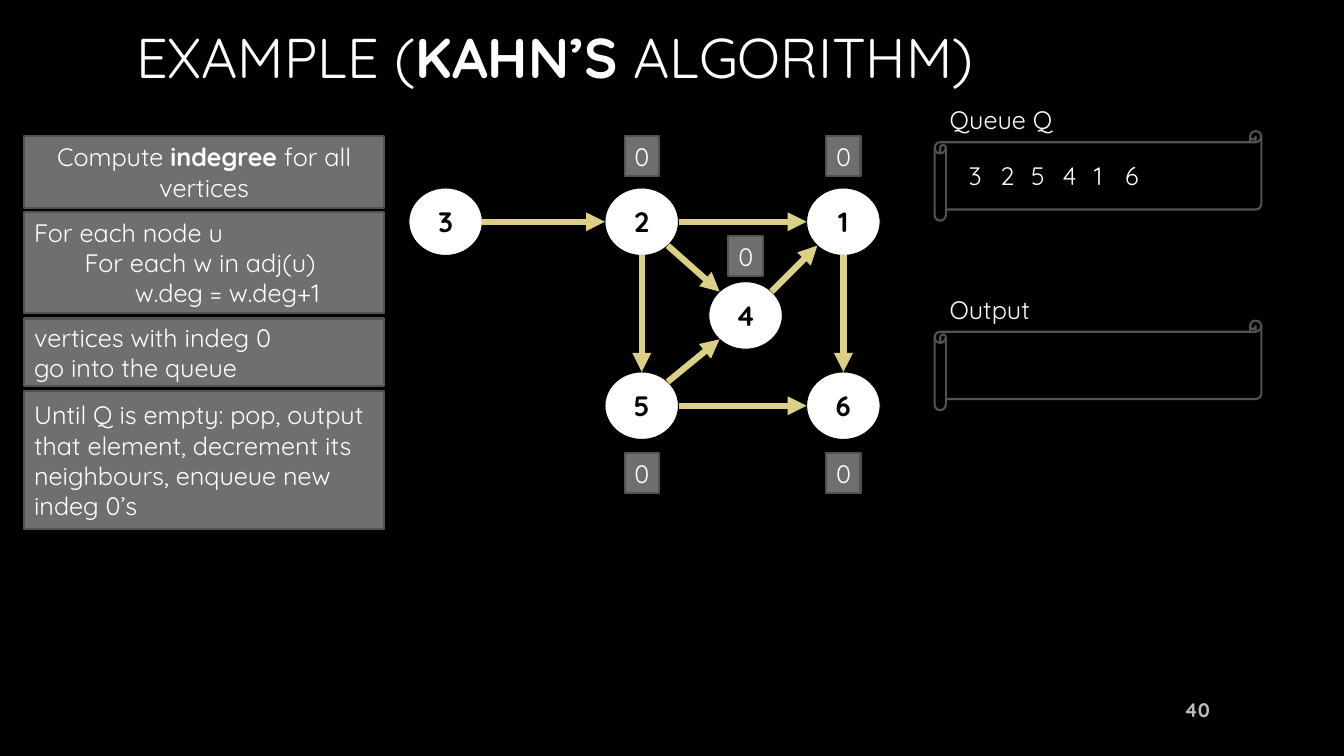
from math import cos, radians, sin

from lxml import etree
from pptx import Presentation
from pptx import util as u
from pptx.dml.color import RGBColor
from pptx.enum import shapes, text
from pptx.oxml import ns

BLACK = RGBColor(0x00, 0x00, 0x00)
WHITE = RGBColor(0xFF, 0xFF, 0xFF)
PANEL_GREY = RGBColor(0x6F, 0x6F, 0x6F)
BORDER_GREY = RGBColor(0x52, 0x52, 0x52)
NUMBER_GREY = RGBColor(0xBF, 0xBF, 0xBF)
ARROW_YELLOW = RGBColor(0xDC, 0xD0, 0x84)
FONT = "Quicksand"

# Centres of the graph's columns and rows, in inches
COLUMNS = (4.42, 6.365, 7.395, 8.365)
ROWS = (2.2, 3.13, 4.025)
NODE_WIDTH, NODE_HEIGHT = 0.73, 0.67
LABEL_WIDTH, LABEL_HEIGHT = 0.34, 0.4

# Node: column, row, distance down to the centre of its indegree label
NODES = {
    "1": (3, 0, -0.65), "6": (3, 2, 0.67), "5": (1, 2, 0.67),
    "2": (1, 0, -0.65), "4": (2, 1, -0.59), "3": (0, 0, None),
}
# Ellipse connection sites run anticlockwise from the top
TOP, TOP_LEFT, LEFT, BOTTOM_LEFT, BOTTOM, BOTTOM_RIGHT, RIGHT, TOP_RIGHT = range(8)
EDGES = (
    ("3", RIGHT, "2", LEFT), ("2", RIGHT, "1", LEFT),
    ("2", BOTTOM_RIGHT, "4", TOP_LEFT), ("4", TOP_RIGHT, "1", BOTTOM_LEFT),
    ("5", TOP_RIGHT, "4", BOTTOM_LEFT), ("2", BOTTOM, "5", TOP),
    ("1", BOTTOM, "6", TOP), ("5", RIGHT, "6", LEFT),
)

STEPS_LEFT, STEPS_WIDTH = 0.24, 3.57
# Top, height, alignment, paragraphs of (wording, bold) runs
STEPS = (
    (1.35, 0.71, text.PP_ALIGN.CENTER,
     [[("Compute ", False), ("indegree", True), (" for all vertices", False)]]),
    (2.1, 1.01, text.PP_ALIGN.LEFT,
     [[("For each node u", False)], [("\tFor each w in adj(u)", False)],
      [("\t\tw.deg = w.deg+1", False)]]),
    (3.16, 0.67, text.PP_ALIGN.LEFT,
     [[("vertices with indeg 0", False)], [("go into the queue", False)]]),
    (3.88, 1.37, text.PP_ALIGN.LEFT,
     [[("Until Q is empty: pop, output that element, decrement its "
        "neighbours, enqueue new indeg 0’s", False)]]),
)

SCROLL_LEFT, SCROLL_WIDTH, SCROLL_HEIGHT = 9.27, 3.24, 0.89
QUEUE = "325416"
QUEUE_LEFT, QUEUE_TOP, QUEUE_STEP = 9.51, 1.54, 0.31


def inches(*lengths):
    return [u.Inches(length) for length in lengths]


def write(frame, paragraphs, size=18, color=WHITE, align=text.PP_ALIGN.LEFT,
          anchor=text.MSO_ANCHOR.MIDDLE, wrap=True):
    """Fill a frame with paragraphs, each a list of (wording, bold) runs."""
    frame.word_wrap = wrap
    frame.vertical_anchor = anchor
    for index, runs in enumerate(paragraphs):
        para = frame.add_paragraph() if index else frame.paragraphs[0]
        para.alignment = align
        para.font.name = FONT
        para.font.size = u.Pt(size)
        para.font.color.rgb = color
        for wording, bold in runs:
            span = para.add_run()
            span.text = wording
            span.font.bold = bold


def add_box(page, kind, place, fill, border, border_width=1.5):
    box = page.shapes.add_shape(kind, *inches(*place))
    box.shadow.inherit = False
    box.fill.solid()
    box.fill.fore_color.rgb = fill
    box.line.color.rgb = border
    box.line.width = u.Pt(border_width)
    return box


def add_label(page, wording, left, top, width=LABEL_WIDTH):
    box = page.shapes.add_textbox(*inches(left, top, width, LABEL_HEIGHT))
    write(box.text_frame, [[(wording, False)]],
          anchor=text.MSO_ANCHOR.TOP, wrap=False)


def add_scroll(page, caption, top, caption_width):
    add_box(page, shapes.MSO_SHAPE.HORIZONTAL_SCROLL,
            (SCROLL_LEFT, top, SCROLL_WIDTH, SCROLL_HEIGHT), BLACK, BORDER_GREY)
    add_label(page, caption, SCROLL_LEFT + 0.05, top - 0.31, caption_width)


def add_node(page, name, column, row):
    place = (COLUMNS[column] - NODE_WIDTH / 2, ROWS[row] - NODE_HEIGHT / 2,
             NODE_WIDTH, NODE_HEIGHT)
    node = add_box(page, shapes.MSO_SHAPE.OVAL, place, WHITE, BLACK, 0.75)
    write(node.text_frame, [[(name, True)]], 20, BLACK, text.PP_ALIGN.CENTER)
    return node


def add_indegree(page, column, row, offset):
    place = (COLUMNS[column] - LABEL_WIDTH / 2,
             ROWS[row] + offset - LABEL_HEIGHT / 2, LABEL_WIDTH, LABEL_HEIGHT)
    box = add_box(page, shapes.MSO_SHAPE.RECTANGLE, place, PANEL_GREY, BORDER_GREY)
    write(box.text_frame, [[("0", False)]],
          anchor=text.MSO_ANCHOR.TOP, wrap=False)


def site_point(node, site):
    """Return the position of a connection site on an ellipse."""
    angle = radians(90 + 45 * site)
    return (round(node.left + node.width / 2 * (1 + cos(angle))),
            round(node.top + node.height / 2 * (1 - sin(angle))))


def add_edge(page, start, start_site, end, end_site):
    edge = page.shapes.add_connector(
        shapes.MSO_CONNECTOR.STRAIGHT,
        *site_point(start, start_site), *site_point(end, end_site))
    edge.line.color.rgb = ARROW_YELLOW
    edge.line.width = u.Pt(4.5)
    etree.SubElement(edge.line._get_or_add_ln(), ns.qn("a:tailEnd"), type="triangle")
    etree.SubElement(edge._element.spPr, ns.qn("a:effectLst"))
    joints = edge._element.nvCxnSpPr.cNvCxnSpPr
    for tag, node, site in (("a:stCxn", start, start_site),
                            ("a:endCxn", end, end_site)):
        etree.SubElement(joints, ns.qn(tag), id=str(node.shape_id), idx=str(site))


def add_title(page):
    title = page.shapes.title
    title.left, title.top, title.width, title.height = inches(1.25, 0, 10.83, 1.12)
    write(title.text_frame,
          [[("EXAMPLE (", False), ("KAHN’S ", True), ("ALGORITHM)", False)]], 40)


def add_page_number(page):
    box = page.shapes.add_textbox(*inches(11.5, 6.84, 0.6, 0.4))
    write(box.text_frame, [[("40", True)]], 14, NUMBER_GREY, text.PP_ALIGN.RIGHT)


def main():
    deck = Presentation()
    deck.slide_width, deck.slide_height = inches(13.33, 7.5)
    page = deck.slides.add_slide(deck.slide_layouts[5])
    page.background.fill.solid()
    page.background.fill.fore_color.rgb = BLACK

    add_title(page)
    for top, height, align, paragraphs in STEPS:
        box = add_box(page, shapes.MSO_SHAPE.RECTANGLE,
                      (STEPS_LEFT, top, STEPS_WIDTH, height), PANEL_GREY, BORDER_GREY)
        write(box.text_frame, paragraphs, align=align)

    nodes = {name: add_node(page, name, column, row)
             for name, (column, row, _) in NODES.items()}
    for start, start_site, end, end_site in EDGES:
        add_edge(page, nodes[start], start_site, nodes[end], end_site)
    for column, row, offset in NODES.values():
        if offset is not None:
            add_indegree(page, column, row, offset)

    add_scroll(page, "Queue Q", 1.3, 1.35)
    add_scroll(page, "Output", 3.18, 1.07)
    for index, name in enumerate(QUEUE):
        add_label(page, name, QUEUE_LEFT + index * QUEUE_STEP, QUEUE_TOP)
    add_page_number(page)
    deck.save("out.pptx")


if __name__ == "__main__":
    main()
